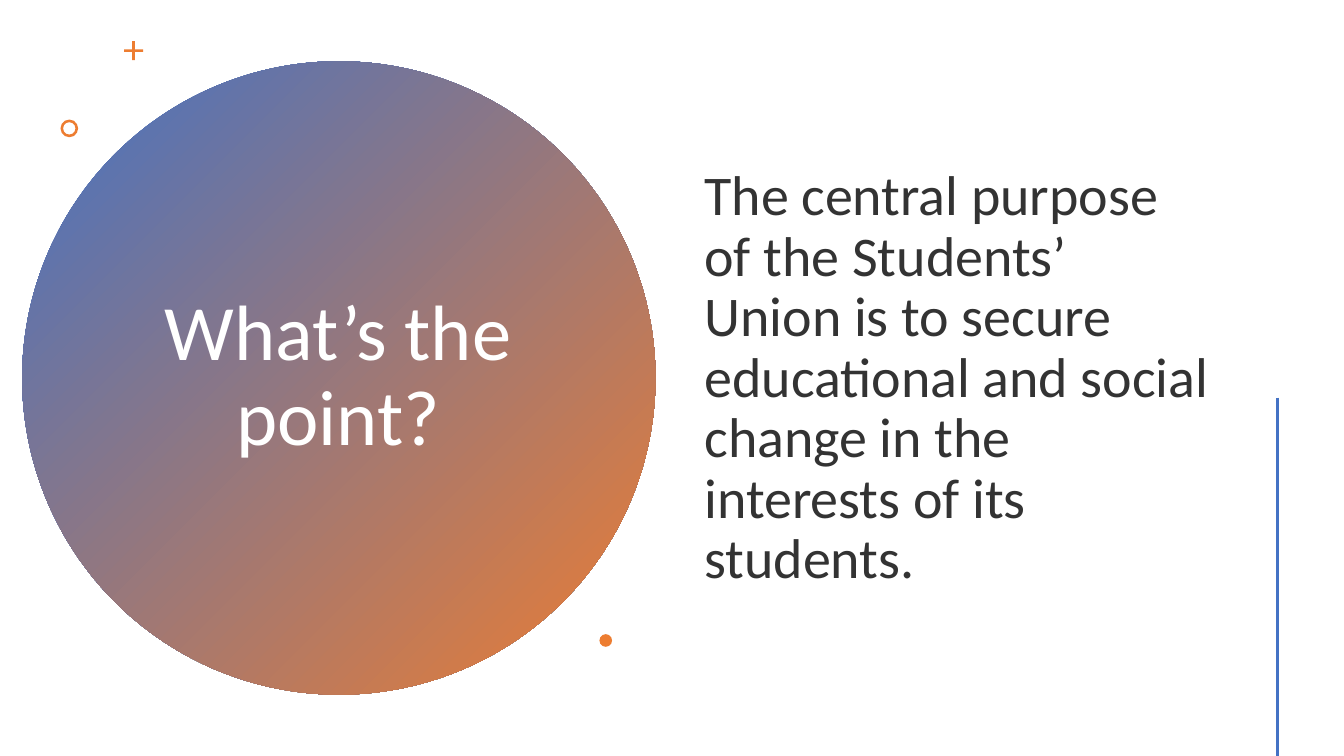
from dataclasses import dataclass

from lxml import etree
from pptx import Presentation
from pptx.dml.color import RGBColor
from pptx.enum.shapes import MSO_CONNECTOR, MSO_SHAPE
from pptx.enum.text import MSO_ANCHOR, PP_ALIGN
from pptx.oxml.ns import qn
from pptx.shapes.autoshape import Shape
from pptx.slide import Slide
from pptx.util import Pt

CROSS, DONUT, OVAL = MSO_SHAPE.CROSS, MSO_SHAPE.DONUT, MSO_SHAPE.OVAL
STRAIGHT = MSO_CONNECTOR.STRAIGHT
MIDDLE = MSO_ANCHOR.MIDDLE
LEFT, CENTER = PP_ALIGN.LEFT, PP_ALIGN.CENTER


@dataclass(frozen=True)
class Theme:
    font: str = "Calibri"
    blue: RGBColor = RGBColor(0x44, 0x72, 0xC4)
    orange: RGBColor = RGBColor(0xED, 0x7D, 0x31)
    white: RGBColor = RGBColor(0xFF, 0xFF, 0xFF)
    ink: RGBColor = RGBColor(0x33, 0x33, 0x33)
    title_size: float = 56
    body_size: float = 40
    line_spacing: float = 0.9
    line_width: float = 2


@dataclass(frozen=True)
class Ornament:
    preset: MSO_SHAPE
    left: float
    top: float
    size: float
    adjustment: float | None = None


@dataclass(frozen=True)
class TextBlock:
    text: str
    left: float
    top: float
    width: float
    height: float
    size: float
    color: RGBColor
    alignment: PP_ALIGN


THEME = Theme()
SLIDE_WIDTH, SLIDE_HEIGHT = 960, 540

DISC = Ornament(OVAL, 15.84, 43.8, 452.4)
ACCENTS = (
    Ornament(CROSS, 88.6, 29.4, 13.6, 0.43),
    Ornament(DONUT, 43.2, 85.4, 12.6, 0.15),
    Ornament(OVAL, 428.2, 453, 9),
)
TITLE = TextBlock("What’s the point?", 97.9, 101.5, 287.3, 336.2,
                  THEME.title_size, THEME.white, CENTER)
BODY = TextBlock(
    "The central purpose of the Students’ Union is to secure educational "
    "and social change in the interests of its students.",
    496.1, 41, 375.8, 459.4, THEME.body_size, THEME.ink, LEFT)


def add_ornament(slide: Slide, ornament: Ornament) -> Shape:
    """Add an orange square-proportioned shape without outline or shadow."""
    shape = slide.shapes.add_shape(
        ornament.preset, Pt(ornament.left), Pt(ornament.top),
        Pt(ornament.size), Pt(ornament.size))
    shape.shadow.inherit = False
    shape.line.fill.background()
    shape.fill.solid()
    shape.fill.fore_color.rgb = THEME.orange
    if ornament.adjustment is not None:
        shape.adjustments[0] = ornament.adjustment
    return shape


def add_disc(slide: Slide) -> None:
    """Add the large circle, shaded from top left to bottom right."""
    fill = add_ornament(slide, DISC).fill
    fill.gradient()
    fill.gradient_angle = 315
    colors = (THEME.blue, THEME.orange)
    for position, (stop, color) in enumerate(zip(fill.gradient_stops, colors)):
        stop.position = position
        stop.color.rgb = color


def add_text(slide: Slide, block: TextBlock) -> None:
    box = slide.shapes.add_textbox(
        Pt(block.left), Pt(block.top), Pt(block.width), Pt(block.height))
    frame = box.text_frame
    frame.word_wrap = True
    frame.vertical_anchor = MIDDLE
    paragraph = frame.paragraphs[0]
    paragraph.alignment = block.alignment
    paragraph.line_spacing = THEME.line_spacing
    run = paragraph.add_run()
    run.text = block.text
    run.font.name = THEME.font
    run.font.size = Pt(block.size)
    run.font.color.rgb = block.color


def add_edge_line(slide: Slide) -> None:
    x = Pt(912.4)
    line = slide.shapes.add_connector(STRAIGHT, x, Pt(284), x, Pt(SLIDE_HEIGHT))
    line.line.color.rgb = THEME.blue
    line.line.width = Pt(THEME.line_width)
    etree.SubElement(line._element.spPr, qn("a:effectLst"))


def main() -> None:
    presentation = Presentation()
    presentation.slide_width = Pt(SLIDE_WIDTH)
    presentation.slide_height = Pt(SLIDE_HEIGHT)
    slide = presentation.slides.add_slide(presentation.slide_layouts[6])
    add_disc(slide)
    for accent in ACCENTS:
        add_ornament(slide, accent)
    for block in (TITLE, BODY):
        add_text(slide, block)
    add_edge_line(slide)
    presentation.save("out.pptx")


if __name__ == "__main__":
    main()
